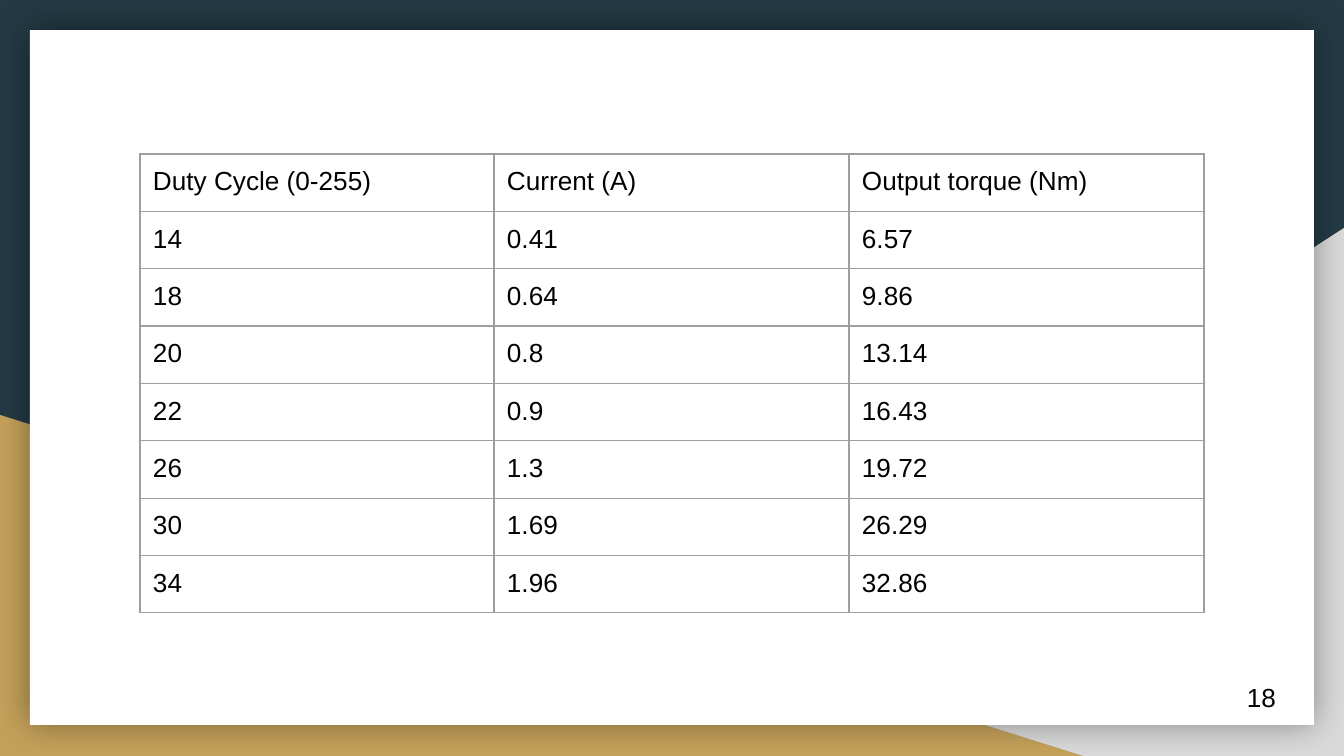
from lxml import etree
from pptx import Presentation
from pptx.dml.color import RGBColor
from pptx.enum.shapes import MSO_SHAPE
from pptx.enum.text import MSO_ANCHOR
from pptx.oxml.ns import qn
from pptx.util import Pt

RECTANGLE = MSO_SHAPE.RECTANGLE
TRIANGLE = MSO_SHAPE.RIGHT_TRIANGLE
MIDDLE = MSO_ANCHOR.MIDDLE
TOP = MSO_ANCHOR.TOP

EMU_PER_PX = 914400 / 134.4
PAGE_WIDTH, PAGE_HEIGHT = 1344, 756
INSET = 13
FONT = "Arial"
COLORS = {
    "navy": "233A44",
    "gray": "D9D9D9",
    "gold": "C4A15A",
    "white": "FFFFFF",
    "black": "000000",
    "border": "9E9E9E",
}
READINGS = [
    ("Duty Cycle (0-255)", "Current (A)", "Output torque (Nm)"),
    ("14", "0.41", "6.57"),
    ("18", "0.64", "9.86"),
    ("20", "0.8", "13.14"),
    ("22", "0.9", "16.43"),
    ("26", "1.3", "19.72"),
    ("30", "1.69", "26.29"),
    ("34", "1.96", "32.86"),
]


def emu(px):
    return round(px * EMU_PER_PX)


def place(box):
    return [emu(length) for length in box]


def split(total, count):
    return [total * (i + 1) // count - total * i // count for i in range(count)]


def paint(fill, color):
    fill.solid()
    fill.fore_color.rgb = RGBColor.from_string(COLORS[color])


def add_block(page, kind, box, color):
    shape = page.shapes.add_shape(kind, *place(box))
    shape.shadow.inherit = False
    shape.line.fill.background()
    paint(shape.fill, color)
    return shape


def write(holder, frame, words, anchor):
    holder.margin_left = holder.margin_right = emu(INSET)
    holder.margin_top = holder.margin_bottom = emu(INSET)
    holder.vertical_anchor = anchor
    span = frame.paragraphs[0].add_run()
    span.text = words
    span.font.name = FONT
    span.font.size = Pt(14)
    span.font.color.rgb = RGBColor.from_string(COLORS["black"])


def add_glow(shape):
    effects = shape._element.spPr.find(qn("a:effectLst"))
    shadow = etree.SubElement(effects, qn("a:outerShdw"), blurRad=str(Pt(18)),
                              dist="0", dir="0", algn="ctr", rotWithShape="0")
    color = etree.SubElement(shadow, qn("a:srgbClr"), val=COLORS["black"])
    etree.SubElement(color, qn("a:alpha"), val="40000")


def add_borders(cell):
    properties = cell._tc.get_or_add_tcPr()
    for position, side in enumerate(("lnL", "lnR", "lnT", "lnB")):
        line = etree.Element(qn(f"a:{side}"), w=str(Pt(0.75)))
        fill = etree.SubElement(line, qn("a:solidFill"))
        etree.SubElement(fill, qn("a:srgbClr"), val=COLORS["border"])
        properties.insert(position, line)


def add_backdrop(page, box):
    left, top, width, height = box
    paint(page.background.fill, "navy")
    right_triangle = add_block(page, TRIANGLE, (left + 527, top + 228, width - 527, height - 228), "gray")
    right_triangle._element.spPr.xfrm.set("flipH", "1")
    add_block(page, TRIANGLE, (left, top + 415, 1083, height - 415), "gold")
    panel = add_block(page, RECTANGLE, (left + 30, top + 30, width - 60, height - 61), "white")
    add_glow(panel)


def add_page_number(page, box, number):
    frame = page.shapes.add_textbox(*place(box)).text_frame
    frame.word_wrap = True
    write(frame, frame, number, MIDDLE)


def add_readings(page, box, readings):
    width, height = box[2:]
    table = page.shapes.add_table(len(readings), len(readings[0]), *place(box)).table
    table.first_row = table.horz_banding = False
    for column, share in zip(table.columns, split(width, len(readings[0]))):
        column.width = emu(share)
    for row, share, values in zip(table.rows, split(height, len(readings)), readings):
        row.height = emu(share)
        for cell, value in zip(row.cells, values):
            cell.fill.background()
            add_borders(cell)
            write(cell, cell.text_frame, value, TOP)


def main():
    deck = Presentation()
    deck.slide_width, deck.slide_height = emu(PAGE_WIDTH), emu(PAGE_HEIGHT)
    page = deck.slides.add_slide(deck.slide_layouts[6])
    add_backdrop(page, (0, 0, PAGE_WIDTH, PAGE_HEIGHT))
    add_page_number(page, (1234, 668, 80, 58), "18")
    add_readings(page, (140, 154, 1064, 450), READINGS)
    deck.save("out.pptx")


if __name__ == "__main__":
    main()
